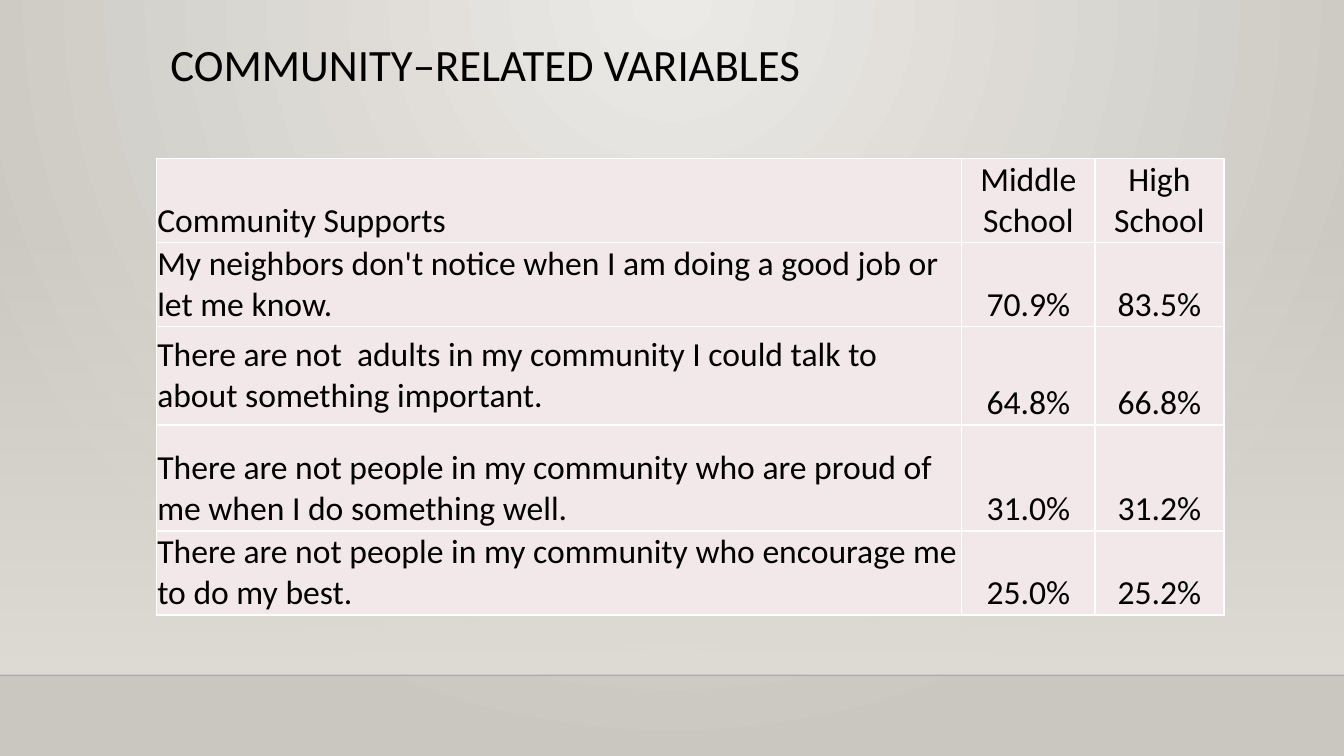
from lxml.etree import SubElement
from pptx import Presentation
from pptx.dml.color import RGBColor
from pptx.enum.shapes import MSO_CONNECTOR as Line, MSO_SHAPE as Shape
from pptx.enum.text import MSO_ANCHOR as Anchor, MSO_AUTO_SIZE as AutoSize, PP_ALIGN as Align
from pptx.oxml.ns import qn
from pptx.util import Inches, Pt

WIDTH, HEIGHT, FLOOR_TOP = 13.33, 7.5, 6.7
COLUMNS = [7.99, 1.32, 1.28]
ROW_HEIGHTS = [0.72, 0.73, 0.98, 1.05, 0.77]
MIDDLE_ROWS = (2, 4)
SUPPORTS = [
    ("Community Supports", "Middle School", "High School"),
    ("My neighbors don't notice when I am doing a good job or let me know.", "70.9%", "83.5%"),
    ("There are not  adults in my community I could talk to about something important.", "64.8%", "66.8%"),
    ("There are not people in my community who are proud of me when I do something well.", "31.0%", "31.2%"),
    ("There are not people in my community who encourage me to do my best.", "25.0%", "25.2%"),
]


def rgb(value):
    return RGBColor.from_string(value)


def set_all(target, values):
    for name, value in values.items():
        setattr(target, name, value)


def write(tf, text, size, align, **frame):
    set_all(tf, {"word_wrap": True, **frame})
    p = tf.paragraphs[0]
    p.alignment = align
    r = p.add_run()
    r.text = text
    set_all(r.font, {"name": "Calibri", "size": Pt(size), "bold": False})
    r.font.color.rgb = rgb("000000")
    return p


def set_gradient(fill, colors):
    fill.gradient()
    for stop, color, position in zip(fill.gradient_stops, colors, (0, 1)):
        stop.color.rgb = rgb(color)
        stop.position = position


def set_alpha(color_element, percent):
    SubElement(color_element, qn("a:alpha"), val=str(percent * 1000))


def add_background(s):
    set_gradient(s.background.fill, ("ECEAE7", "CAC7C1"))
    grad = next(s._element.iter(qn("a:gradFill")))
    grad.remove(grad.find(qn("a:lin")))
    circle = SubElement(grad, qn("a:path"), {"path": "circle"})
    SubElement(circle, qn("a:fillToRect"), l="43000", t="0", r="43000", b="100000")


def add_wall(s):
    top = 2.21
    sp = s.shapes.add_shape(Shape.RECTANGLE, 0, Inches(top), Inches(WIDTH), Inches(FLOOR_TOP - top))
    sp.shadow.inherit = False
    sp.line.fill.background()
    set_gradient(sp.fill, ("DFDBD5", "DFDBD5"))
    sp.fill.gradient_angle = 270
    set_alpha(next(sp._element.spPr.iter(qn("a:srgbClr"))), 0)


def add_floor_line(s):
    y = Inches(FLOOR_TOP)
    line = s.shapes.add_connector(Line.STRAIGHT, 0, y, Inches(WIDTH), y)
    line.line.width = Pt(1)
    line.line.color.rgb = rgb("000001")
    spPr = line._element.spPr
    set_alpha(next(spPr.iter(qn("a:srgbClr"))), 20)
    SubElement(spPr, qn("a:effectLst"))


def add_title(s, text):
    sp = s.shapes.title
    set_all(sp, {"left": Inches(1.59), "top": Inches(0.37), "width": Inches(10.5), "height": Inches(0.94)})
    p = write(sp.text_frame, text, 32, Align.LEFT, vertical_anchor=Anchor.TOP, auto_size=AutoSize.NONE)
    p.line_spacing = 0.9


def add_borders(cell):
    tcPr = cell._tc.get_or_add_tcPr()
    for side in ("lnL", "lnR", "lnT", "lnB"):
        ln = SubElement(tcPr, qn(f"a:{side}"), w=str(Pt(1)))
        SubElement(SubElement(ln, qn("a:solidFill")), qn("a:srgbClr"), val="FFFFFF")


def format_cell(cell, text, align, anchor):
    add_borders(cell)
    cell.fill.solid()
    cell.fill.fore_color.rgb = rgb("F3E8E9")
    sides = ("left", "right", "top", "bottom")
    set_all(cell, {f"margin_{side}": Inches(0.01) for side in sides})
    cell.vertical_anchor = anchor
    write(cell.text_frame, text, 24, align)


def add_supports_table(s):
    frame = s.shapes.add_table(len(SUPPORTS), len(COLUMNS), Inches(1.55), Inches(1.57),
                               Inches(sum(COLUMNS)), Inches(sum(ROW_HEIGHTS)))
    table = frame.table
    set_all(table, {"first_row": False, "horz_banding": False})
    for column, width in zip(table.columns, COLUMNS):
        column.width = Inches(width)
    for i, (row, height) in enumerate(zip(table.rows, ROW_HEIGHTS)):
        row.height = Inches(height)
        for j, text in enumerate(SUPPORTS[i]):
            align = Align.CENTER if j else Align.LEFT
            anchor = Anchor.MIDDLE if j == 0 and i in MIDDLE_ROWS else Anchor.BOTTOM
            format_cell(table.cell(i, j), text, align, anchor)


def main():
    prs = Presentation()
    set_all(prs, {"slide_width": Inches(WIDTH), "slide_height": Inches(HEIGHT)})
    s = prs.slides.add_slide(prs.slide_layouts[5])
    add_background(s)
    add_wall(s)
    add_floor_line(s)
    add_title(s, "COMMUNITY–RELATED VARIABLES")
    add_supports_table(s)
    prs.save("out.pptx")


if __name__ == "__main__":
    main()
